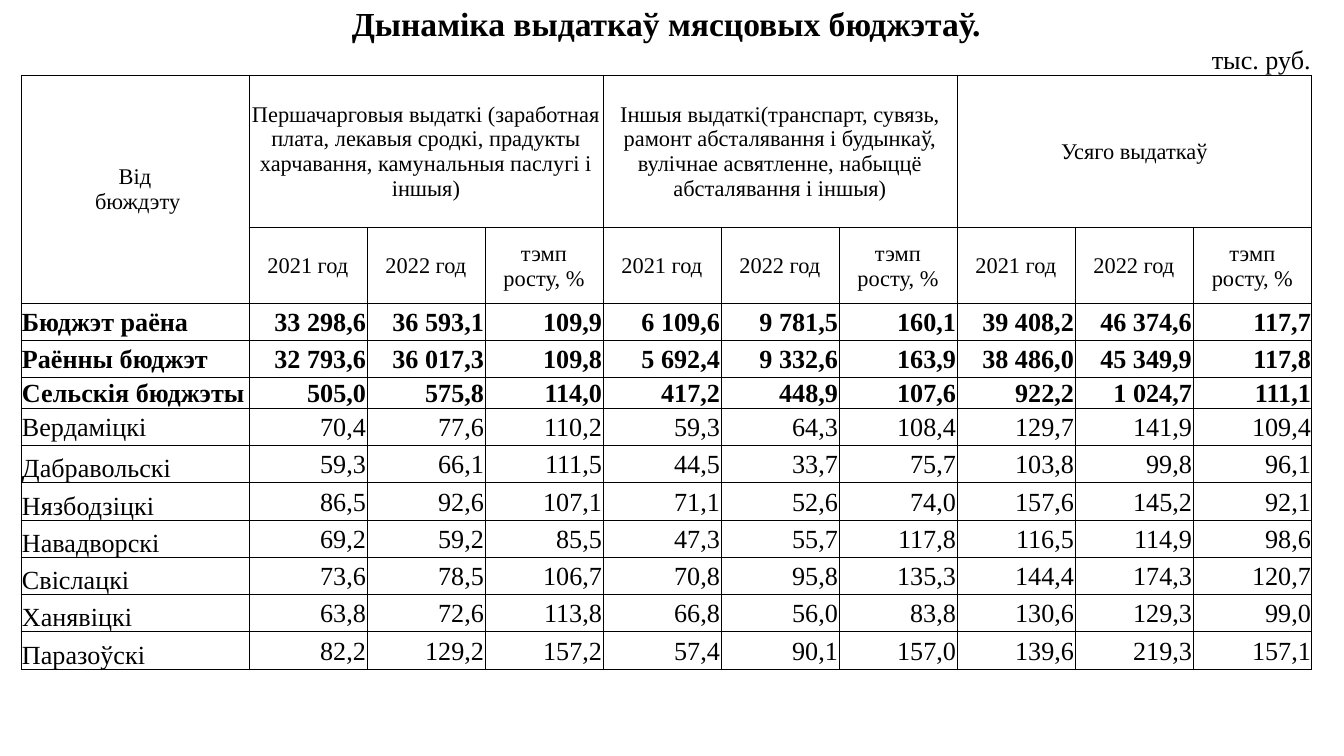
import itertools

import pptx
import pptx.dml.color
import pptx.enum.text
import pptx.oxml
import pptx.oxml.ns
import pptx.util

BLACK = pptx.dml.color.RGBColor(0x00, 0x00, 0x00)
PX = 914400 / 134.4
ALIGN = pptx.enum.text.PP_ALIGN
ANCHOR = pptx.enum.text.MSO_ANCHOR
SIDES = "LRTB"

COL_EDGES = [21] + [249 + 1063 * k // 9 for k in range(10)]
ROW_EDGES = [4, 44, 75, 228, 304, 341, 378, 409, 446, 483, 521, 558, 595, 632, 670]

GROUPS = [
    "Першачарговыя выдаткі (заработная плата, лекавыя сродкі, прадукты "
    "харчавання, камунальныя паслугі і іншыя)",
    "Іншыя выдаткі(транспарт, сувязь, рамонт абсталявання і будынкаў, "
    "вулічнае асвятленне, набыццё абсталявання і іншыя)",
    "Усяго выдаткаў",
]
MEASURES = ["2021 год", "2022 год", "тэмп\nросту, %"]
BUDGETS = [
    ("Бюджэт раёна", 33298.6, 36593.1, 109.9, 6109.6, 9781.5, 160.1, 39408.2, 46374.6, 117.7),
    ("Раённы бюджэт", 32793.6, 36017.3, 109.8, 5692.4, 9332.6, 163.9, 38486.0, 45349.9, 117.8),
    ("Сельскія бюджэты", 505.0, 575.8, 114.0, 417.2, 448.9, 107.6, 922.2, 1024.7, 111.1),
    ("Вердаміцкі", 70.4, 77.6, 110.2, 59.3, 64.3, 108.4, 129.7, 141.9, 109.4),
    ("Дабравольскі", 59.3, 66.1, 111.5, 44.5, 33.7, 75.7, 103.8, 99.8, 96.1),
    ("Нязбодзіцкі", 86.5, 92.6, 107.1, 71.1, 52.6, 74.0, 157.6, 145.2, 92.1),
    ("Навадворскі", 69.2, 59.2, 85.5, 47.3, 55.7, 117.8, 116.5, 114.9, 98.6),
    ("Свіслацкі", 73.6, 78.5, 106.7, 70.8, 95.8, 135.3, 144.4, 174.3, 120.7),
    ("Ханявiцкi", 63.8, 72.6, 113.8, 66.8, 56.0, 83.8, 130.6, 129.3, 99.0),
    ("Паразоўскі", 82.2, 129.2, 157.2, 57.4, 90.1, 157.0, 139.6, 219.3, 157.1),
]
SUMMARY_ROWS = 3
FIRST_BOTTOM_NAME = 4


def px(n):
    return pptx.util.Emu(round(n * PX))


def decimal_comma(value):
    return f"{value:,.1f}".replace(",", " ").replace(".", ",")


class Deck:
    font = "Times New Roman"
    line_width = pptx.util.Pt(0.5)

    def __init__(self, prs):
        self.s = prs.slides.add_slide(prs.slide_layouts[6])

    def table(self, col_edges, row_edges):
        """Add an unstyled table whose grid lines stand at the given edges."""
        shape = self.s.shapes.add_table(
            len(row_edges) - 1, len(col_edges) - 1, px(col_edges[0]), px(row_edges[0]),
            px(col_edges[-1] - col_edges[0]), px(row_edges[-1] - row_edges[0]))
        tbl = shape.table
        tbl.first_row = tbl.horz_banding = False
        for col, (a, b) in zip(tbl.columns, itertools.pairwise(col_edges)):
            col.width = px(b - a)
        for row, (a, b) in zip(tbl.rows, itertools.pairwise(row_edges)):
            row.height = px(b - a)
        return tbl

    def frame(self, cell, sides):
        """Clear the fill and margins; draw borders on the named sides only."""
        cell.fill.background()
        margins = {"margin_left": 1, "margin_right": 1, "margin_top": 1, "margin_bottom": 0}
        for name, value in margins.items():
            setattr(cell, name, px(value))
        tc_pr = cell._tc.get_or_add_tcPr()
        for i, side in enumerate(SIDES):
            paint = f'<a:solidFill><a:srgbClr val="{BLACK}"/></a:solidFill>'
            if side not in sides:
                paint = "<a:noFill/>"
            tc_pr.insert(i, pptx.oxml.parse_xml(
                f'<a:ln{side} {pptx.oxml.ns.nsdecls("a")} w="{self.line_width}">{paint}</a:ln{side}>'))

    def empty(self, cell, size):
        p = cell.text_frame.paragraphs[0]
        p._p.append(pptx.oxml.parse_xml(
            f'<a:endParaRPr {pptx.oxml.ns.nsdecls("a")} sz="{size * 100}"/>'))

    def text(self, cell, text, size, align=ALIGN.CENTER, anchor=ANCHOR.MIDDLE, bold=False):
        cell.vertical_anchor = anchor
        tf = cell.text_frame
        style = {"name": self.font, "size": pptx.util.Pt(size), "bold": bold}
        for i, line in enumerate(text.split("\n")):
            p = tf.add_paragraph() if i else tf.paragraphs[0]
            p.alignment = align
            r = p.add_run()
            r.text = line
            for name, value in style.items():
                setattr(r.font, name, value)
            r.font.color.rgb = BLACK


def main():
    prs = pptx.Presentation()
    prs.slide_width, prs.slide_height = px(1344), px(756)
    deck = Deck(prs)
    tbl = deck.table(COL_EDGES, ROW_EDGES)

    for i, row in enumerate(tbl.rows):
        for cell in row.cells:
            deck.frame(cell, {0: "", 1: "B"}.get(i, SIDES))
    for cell in tbl.rows[1].cells:
        if cell is not tbl.cell(1, 9):
            deck.empty(cell, 12)

    tbl.cell(0, 0).merge(tbl.cell(0, 9))
    deck.text(tbl.cell(0, 0), "Дынаміка выдаткаў мясцовых бюджэтаў.", 18,
              anchor=ANCHOR.BOTTOM, bold=True)
    for col in (1, 3, 5):
        tbl.cell(1, col).merge(tbl.cell(1, col + 1))
    deck.text(tbl.cell(1, 9), "тыс. руб.", 14, ALIGN.RIGHT, ANCHOR.BOTTOM)

    tbl.cell(2, 0).merge(tbl.cell(3, 0))
    deck.text(tbl.cell(2, 0), "Від\n бюждэту", 12)
    for g, group in enumerate(GROUPS):
        first = 1 + g * len(MEASURES)
        tbl.cell(2, first).merge(tbl.cell(2, first + len(MEASURES) - 1))
        deck.text(tbl.cell(2, first), group, 12)
        for m, measure in enumerate(MEASURES):
            deck.text(tbl.cell(3, first + m), measure, 12)

    for i, (name, *values) in enumerate(BUDGETS):
        bold = i < SUMMARY_ROWS
        anchor = ANCHOR.BOTTOM if i >= FIRST_BOTTOM_NAME else ANCHOR.MIDDLE
        deck.text(tbl.cell(4 + i, 0), name, 14, ALIGN.LEFT, anchor, bold)
        for col, value in enumerate(values, 1):
            deck.text(tbl.cell(4 + i, col), decimal_comma(value), 14, ALIGN.RIGHT, bold=bold)

    prs.save("out.pptx")


if __name__ == "__main__":
    main()
